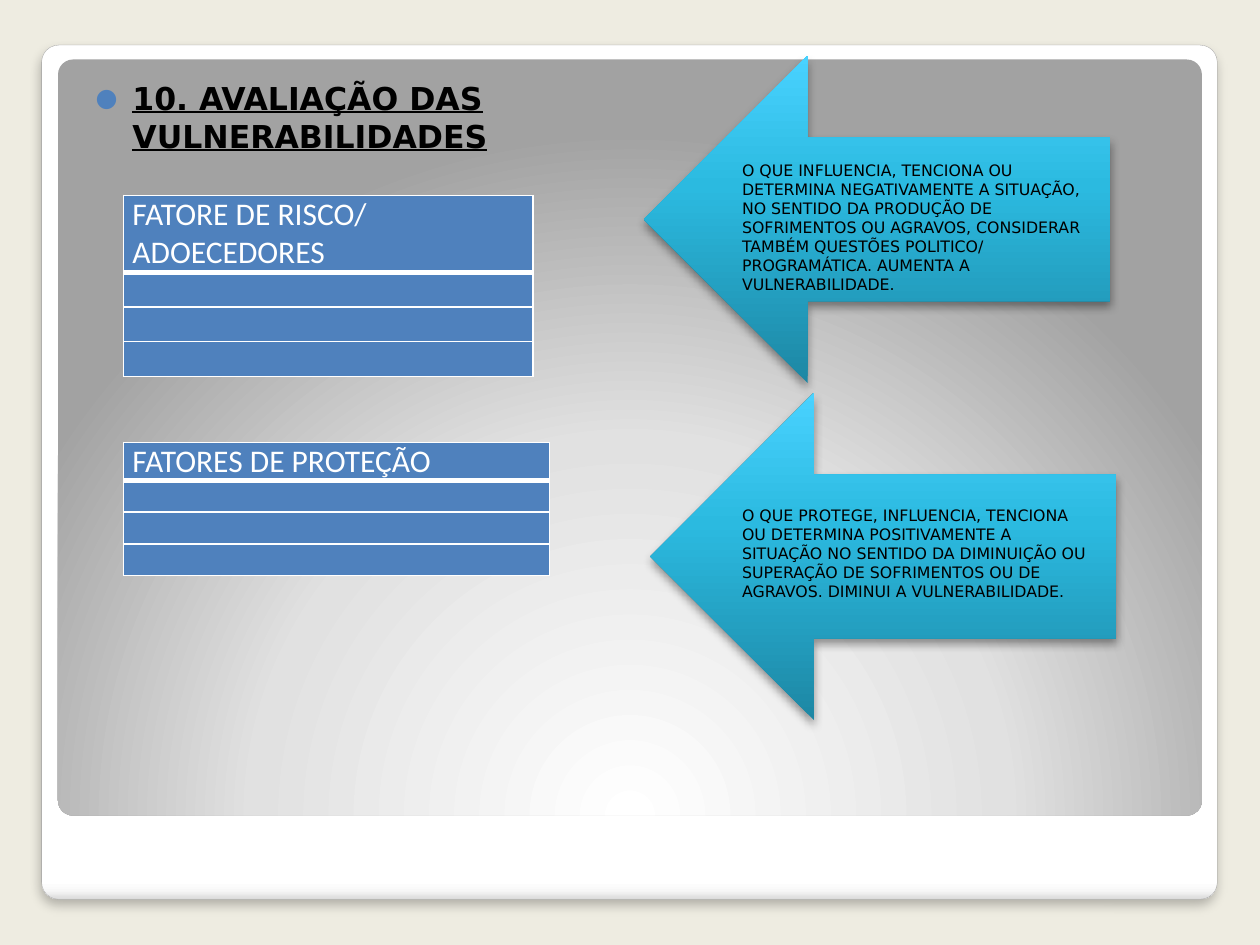
from lxml.etree import SubElement, fromstring
from pptx import Presentation
from pptx.dml.color import RGBColor
from pptx.enum.shapes import MSO_SHAPE
from pptx.enum.text import MSO_ANCHOR, MSO_AUTO_SIZE, PP_ALIGN
from pptx.oxml.ns import qn
from pptx.util import Cm, Pt

FONT = "DejaVu Sans"
NAMESPACE = 'xmlns:a="http://schemas.openxmlformats.org/drawingml/2006/main"'
LINEAR = '<a:lin ang="{}" scaled="0"/>'
CIRCLE = '<a:path path="circle"><a:fillToRect l="50000" t="175000" r="50000" b="-75000"/></a:path>'


def style_font(font, size, color, strong=False):
    font.name, font.size = FONT, Pt(size)
    font.bold = font.underline = strong
    font.color.rgb = RGBColor.from_string(color)


def add_gradient_shape(kind, left, top, width, height, stops, direction, shadow=None):
    shape = slide.shapes.add_shape(kind, Cm(left), Cm(top), Cm(width), Cm(height))
    shape.line.fill.background()
    shape.shadow.inherit = False
    properties = shape._element.spPr
    stop_xml = "".join(f'<a:gs pos="{position * 1000}"><a:srgbClr val="{color}"/></a:gs>'
                       for position, color in stops)
    properties.insert(2, fromstring(
        f'<a:gradFill {NAMESPACE} rotWithShape="1"><a:gsLst>{stop_xml}</a:gsLst>{direction}</a:gradFill>'))
    if shadow:
        blur, distance, opacity = shadow
        properties.find(qn("a:effectLst")).append(fromstring(
            f'<a:outerShdw {NAMESPACE} blurRad="{Pt(blur)}" dist="{Pt(distance)}" dir="5400000" '
            f'rotWithShape="0"><a:srgbClr val="000000"><a:alpha val="{opacity * 1000}"/>'
            '</a:srgbClr></a:outerShdw>'))
    return shape


presentation = Presentation()
presentation.slide_width, presentation.slide_height = Cm(25.4), Cm(19.05)
slide = presentation.slides.add_slide(presentation.slide_layouts[5])
slide.background.fill.solid()
slide.background.fill.fore_color.rgb = RGBColor.from_string("EEECE1")

# White frame and grey panel
frame = add_gradient_shape(
    MSO_SHAPE.ROUNDED_RECTANGLE, 0.84, 0.91, 23.7, 17.22,
    [(0, "FFFFFF"), (98, "FFFFFF"), (99, "F7F7F7"), (100, "DADADA")],
    LINEAR.format(5400000), (6, 4, 25))
frame.line.color.rgb = RGBColor.from_string("A4A4A4")
frame.line.width = Pt(0.16)
panel = add_gradient_shape(
    MSO_SHAPE.ROUNDED_RECTANGLE, 1.17, 1.2, 23.06, 15.24,
    [(0, "FFFFFF"), (55, "E1E1E1"), (100, "A2A2A2")], CIRCLE)
for shape in (frame, panel):
    shape.adjustments[0] = 0.02

# Bulleted title, brought in front of the panel
title = slide.shapes.title
slide.shapes._spTree.append(title._element)
title.left, title.top, title.width, title.height = Cm(1.42), Cm(1.47), Cm(10.92), Cm(12.19)
text_frame = title.text_frame
text_frame.text = "10. AVALIAÇÃO DAS VULNERABILIDADES"
text_frame.auto_size = MSO_AUTO_SIZE.NONE
text_frame.vertical_anchor = MSO_ANCHOR.TOP
text_frame.margin_left = Cm(0.51)
paragraph = text_frame.paragraphs[0]
paragraph.alignment = PP_ALIGN.LEFT
paragraph.space_before = Pt(2.5)
properties = paragraph._p.get_or_add_pPr()
properties.set("marL", str(Cm(0.74)))
properties.set("indent", str(-Cm(0.74)))
SubElement(SubElement(properties, qn("a:buClr")), qn("a:srgbClr"), val="4F81BD")
SubElement(properties, qn("a:buSzPct"), val="80000")
SubElement(properties, qn("a:buFont"), typeface=FONT)
SubElement(properties, qn("a:buChar"), char="●")
style_font(paragraph.font, 18, "000000", strong=True)

# Each factor: heading, table top, width and row height, arrow left and top, note top and height, note
factors = [
    ("FATORE DE RISCO/ ADOECEDORES", 3.94, 8.25, 0.7, 12.98, 1.12, 3.12, 3.25,
     "O QUE INFLUENCIA, TENCIONA OU DETERMINA NEGATIVAMENTE A SITUAÇÃO, NO SENTIDO DA PRODUÇÃO DE "
     "SOFRIMENTOS OU AGRAVOS, CONSIDERAR TAMBÉM QUESTÕES POLITICO/ PROGRAMÁTICA. AUMENTA A "
     "VULNERABILIDADE."),
    ("FATORES DE PROTEÇÃO", 8.92, 8.59, 0.64, 13.11, 7.92, 10.08, 2.49,
     "O QUE PROTEGE, INFLUENCIA, TENCIONA OU DETERMINA POSITIVAMENTE A SITUAÇÃO NO SENTIDO DA "
     "DIMINUIÇÃO OU SUPERAÇÃO DE SOFRIMENTOS OU DE AGRAVOS. DIMINUI A VULNERABILIDADE."),
]
ROWS = 4
for (heading, table_top, table_width, row_height,
     arrow_left, arrow_top, note_top, note_height, note) in factors:
    # Table with a heading row and empty rows
    table = slide.shapes.add_table(ROWS, 1, Cm(2.49), Cm(table_top),
                                   Cm(table_width), Cm(row_height * ROWS)).table
    for index, row in enumerate(table.rows):
        row.height = Cm(row_height)
        cell = row.cells[0]
        cell.margin_left = cell.margin_right = Cm(0.18)
        cell.margin_top = cell.margin_bottom = 0
        for side in ("lnL", "lnR", "lnT", "lnB"):
            thick = (index, side) in ((0, "lnB"), (1, "lnT"))
            border = SubElement(cell._tc.get_or_add_tcPr(), qn(f"a:{side}"), w=str(Pt(3 if thick else 1)))
            SubElement(SubElement(border, qn("a:solidFill")), qn("a:srgbClr"), val="FFFFFF")
        cell.fill.solid()
        cell.fill.fore_color.rgb = RGBColor.from_string("4F81BD")
        paragraph = cell.text_frame.paragraphs[0]
        if index == 0:
            cell.text = heading
            paragraph.alignment = PP_ALIGN.CENTER
            paragraph.line_spacing = 1.5
            style_font(paragraph.font, 10, "FFFFFF", strong=True)
        else:
            SubElement(paragraph._p, qn("a:endParaRPr"), sz="1000")

    # Arrow pointing at the table
    add_gradient_shape(MSO_SHAPE.LEFT_ARROW, arrow_left, arrow_top, 9.4, 6.6,
                       [(0, "1D87A4"), (60, "2BBAE0"), (100, "49D2FF")],
                       LINEAR.format(16200000), (5.2, 3, 40))

    # Explanation over the arrow
    text_box = slide.shapes.add_textbox(Cm(14.71), Cm(note_top), Cm(7.59), Cm(note_height))
    text_box.text_frame.word_wrap = True
    text_box.text_frame.auto_size = MSO_AUTO_SIZE.SHAPE_TO_FIT_TEXT
    text_box.text_frame.text = note
    style_font(text_box.text_frame.paragraphs[0].font, 9, "000000")

presentation.save("out.pptx")
